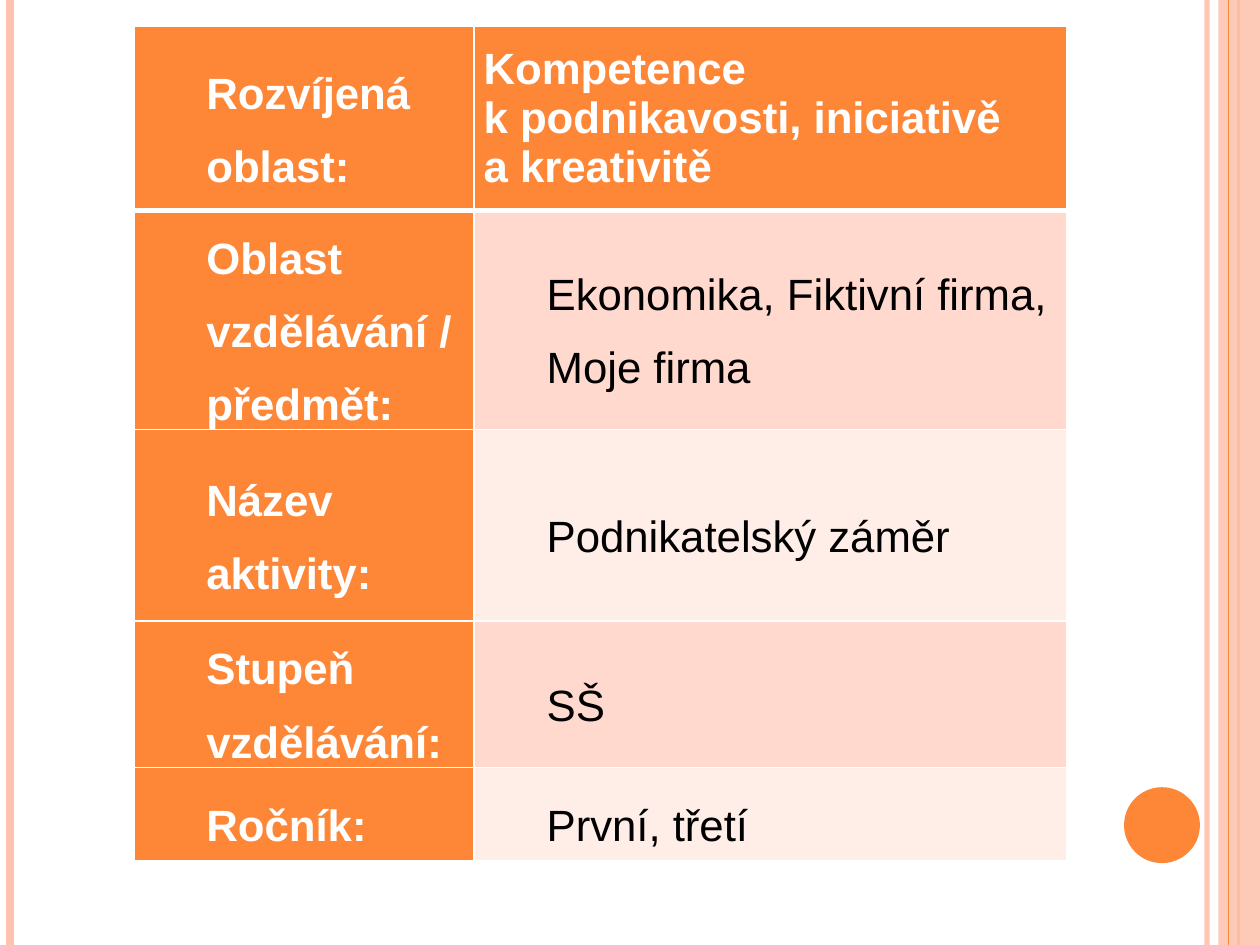
from lxml import etree
from pptx import Presentation, util as u
from pptx.dml.color import RGBColor
from pptx.enum import shapes, text
from pptx.oxml.ns import qn

ROWS = [
    ("Rozvíjená oblast:", "Kompetence k\u00a0podnikavosti, iniciativě \va kreativitě", 3.71),
    ("Oblast vzdělávání / předmět:", "Ekonomika, Fiktivní firma, Moje firma", 3.86),
    ("Název aktivity:", "Podnikatelský záměr", 3.86),
    ("Stupeň vzdělávání:", "SŠ", 1.88),
    ("Ročník:", "První, třetí", 1.88),
]
COLUMNS = [6.86, 11.94]
THEME = {
    "accent": "FE8637", "pale": "FEC3AE", "bands": ["FFEDE8", "FFD9CE"],
    "light": "FFFFFF", "dark": "000000", "font": "Arial", "size": 25,
}
W, H = 25.4, 19.05
BACK_LINES = [(24.33, "pale", 3, 93), (0.2, "pale", 4.5, 100), (24.97, "accent", 1.5, 100)]
FRONT_LINES = [(24.77, "accent", 0.75, 100)]


def rgb(value):
    return RGBColor.from_string(value)


def set_alpha(sp, percent):
    for color in sp._element.spPr.iter(qn("a:srgbClr")):
        etree.SubElement(color, qn("a:alpha"), val=str(percent * 1000))


def add_rule(s, x, color, width, alpha):
    ln = s.shapes.add_connector(shapes.MSO_CONNECTOR.STRAIGHT, u.Cm(x), 0, u.Cm(x), u.Cm(H))
    ln.line.color.rgb = rgb(THEME[color])
    ln.line.width = u.Pt(width)
    if alpha < 100:
        set_alpha(ln, alpha)
    etree.SubElement(ln._element.spPr, qn("a:effectLst"))


def add_plain(s, kind, box, color):
    sp = s.shapes.add_shape(kind, *map(u.Cm, box))
    sp.shadow.inherit = False
    sp.fill.solid()
    sp.fill.fore_color.rgb = rgb(THEME[color])
    sp.line.fill.background()
    return sp


def set_borders(cell, bottom):
    tcPr = cell._tc.get_or_add_tcPr()
    for i, (side, width) in enumerate([("L", 1), ("R", 1), ("T", 1), ("B", bottom)]):
        ln = etree.Element(qn(f"a:ln{side}"), w=str(u.Pt(width)))
        fill = etree.SubElement(ln, qn("a:solidFill"))
        etree.SubElement(fill, qn("a:srgbClr"), val=THEME["light"])
        tcPr.insert(i, ln)


def fill_cell(cell, content, row, col):
    strong = row == 0 or col == 0
    cell.fill.solid()
    cell.fill.fore_color.rgb = rgb(THEME["accent"] if strong else THEME["bands"][row % 2])
    set_borders(cell, 3 if row == 0 else 1)
    layout = {
        "vertical_anchor": text.MSO_ANCHOR.MIDDLE, "margin_top": 0, "margin_bottom": 0,
        "margin_left": u.Cm(0.19), "margin_right": u.Cm(0.19),
    }
    for name, value in layout.items():
        setattr(cell, name, value)
    tf = cell.text_frame
    tf.text = content
    p = tf.paragraphs[0]
    if (row, col) != (0, 1):
        p.line_spacing = 1.5
        p._p.get_or_add_pPr().set("marL", str(u.Cm(1.27)))
    style = {"name": THEME["font"], "size": u.Pt(THEME["size"]), "bold": strong}
    for r in p.runs:
        for name, value in style.items():
            setattr(r.font, name, value)
        r.font.color.rgb = rgb(THEME["light" if strong else "dark"])


def main():
    prs = Presentation()
    prs.slide_width, prs.slide_height = u.Cm(W), u.Cm(H)
    s = prs.slides.add_slide(prs.slide_layouts[6])

    for rule in BACK_LINES:
        add_rule(s, *rule)
    band = add_plain(s, shapes.MSO_SHAPE.RECTANGLE, (24.56, 0, W - 24.56, H), "pale")
    set_alpha(band, 87)
    for rule in FRONT_LINES:
        add_rule(s, *rule)
    add_plain(s, shapes.MSO_SHAPE.OVAL, (22.66, 15.87, 1.53, 1.53), "accent")

    height = sum(row[-1] for row in ROWS)
    table = s.shapes.add_table(len(ROWS), len(COLUMNS), u.Cm(2.7), u.Cm(0.53),
                               u.Cm(sum(COLUMNS)), u.Cm(height)).table
    for column, width in zip(table.columns, COLUMNS):
        column.width = u.Cm(width)
    for i, (*contents, row_height) in enumerate(ROWS):
        table.rows[i].height = u.Cm(row_height)
        for j, content in enumerate(contents):
            fill_cell(table.cell(i, j), content, i, j)

    prs.save("out.pptx")


if __name__ == "__main__":
    main()
